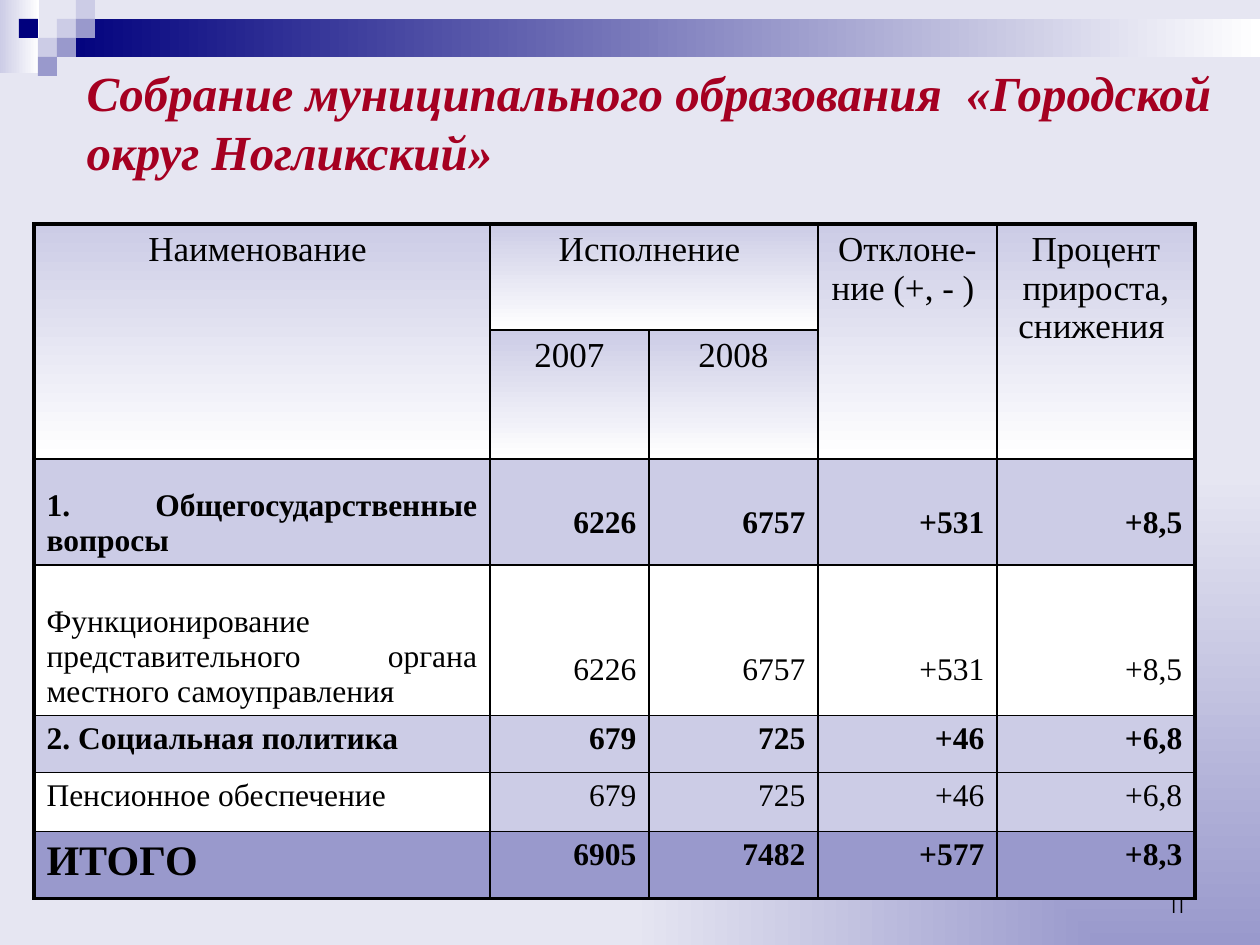
from lxml import etree
from pptx import Presentation
from pptx.dml.color import RGBColor
from pptx.enum.shapes import MSO_SHAPE
from pptx.enum.text import MSO_ANCHOR, MSO_AUTO_SIZE, PP_ALIGN
from pptx.oxml.ns import qn
from pptx.util import Emu, Pt

RECTANGLE = MSO_SHAPE.RECTANGLE
TOP, MIDDLE, BOTTOM = MSO_ANCHOR.TOP, MSO_ANCHOR.MIDDLE, MSO_ANCHOR.BOTTOM
LEFT, CENTER, RIGHT, JUSTIFY = (
    PP_ALIGN.LEFT, PP_ALIGN.CENTER, PP_ALIGN.RIGHT, PP_ALIGN.JUSTIFY)

BLACK = RGBColor(0x00, 0x00, 0x00)
WHITE = RGBColor(0xFF, 0xFF, 0xFF)
NAVY = RGBColor(0x00, 0x00, 0x7D)
LAVENDER = RGBColor(0xCC, 0xCC, 0xE6)
VIOLET = RGBColor(0x99, 0x99, 0xCC)
PALE = RGBColor(0xE6, 0xE6, 0xF2)
CRIMSON = RGBColor(0xA5, 0x00, 0x21)

SERIF, SANS = "Times New Roman", "Montserrat"
TITLE = "Собрание муниципального образования  «Городской округ Ногликский»"

SQUARE = 19
# Column, row and colour of each small square
SQUARES = [(3, 1, LAVENDER), (4, 0, LAVENDER), (4, 1, VIOLET), (2, 2, LAVENDER),
           (1, 1, NAVY), (3, 2, VIOLET), (2, 3, VIOLET)]

COLUMN_WIDTHS = [456, 159, 169, 179, 198]
ROW_HEIGHTS = [106, 58, 106, 151, 57, 59, 67]
CELL_MARGIN, LINE_DROP = 6, 41
# Row, column, last row and last column of each heading
HEADINGS = [
    ("Наименование ", 0, 0, 1, 0),
    ("Исполнение ", 0, 1, 0, 2),
    ("Отклоне-ние (+, - ) ", 0, 3, 1, 3),
    ("Процент прироста, снижения ", 0, 4, 1, 4),
    ("2007", 1, 1, 1, 1),
    ("2008", 1, 2, 1, 2),
]
# Name, values, bold, name size, name fill, value fill, lines the values drop
BUDGET = [
    ("1. Общегосударственные вопросы", ["6226", "6757", "+531", "+8,5"],
     True, 18, LAVENDER, LAVENDER, 1),
    ("Функционирование представительного органа местного самоуправления ",
     ["6226", "6757", "+531", "+8,5"], False, 18, WHITE, WHITE, 2),
    ("2. Социальная политика", ["679", "725", "+46", "+6,8"],
     True, 18, LAVENDER, LAVENDER, 0),
    ("Пенсионное обеспечение", ["679", "725", "+46", "+6,8"],
     False, 18, WHITE, LAVENDER, 0),
    ("ИТОГО", ["6905", "7482", "+577", "+8,3"], True, 24, VIOLET, VIOLET, 0),
]


def px(length):
    return Emu(round(length * 914400 / 126))


def fill_gradient(fill, start, end, angle=0):
    fill.gradient()
    fill.gradient_angle = angle
    for stop, color in zip(fill.gradient_stops, (start, end)):
        stop.color.rgb = color


def set_background(page):
    """Gradient that spreads from the lower right corner."""
    fill_gradient(page.background.fill, VIOLET, PALE)
    linear = page.element.find(".//" + qn("a:lin"))
    spread = etree.Element(qn("a:path"), {"path": "rect"})
    etree.SubElement(spread, qn("a:fillToRect"), {"l": "100000", "t": "100000"})
    linear.getparent().replace(linear, spread)


def add_block(page, left, top, width, height, color, fade_to=None):
    block = page.shapes.add_shape(
        RECTANGLE, px(left), px(top), px(width), px(height))
    block.shadow.inherit = False
    block.line.fill.background()
    if fade_to is None:
        block.fill.solid()
        block.fill.fore_color.rgb = color
    else:
        fill_gradient(block.fill, color, fade_to)


def write(text_frame, text, size, align, font=SERIF, color=BLACK,
          bold=False, italic=False):
    text_frame.text = text
    text_frame.word_wrap = True
    para = text_frame.paragraphs[0]
    para.alignment = align
    span = para.runs[0].font
    span.name, span.size, span.color.rgb = font, Pt(size), color
    span.bold, span.italic = bold, italic
    return para


def add_title(page):
    title = page.shapes.title
    title.left, title.top, title.width, title.height = map(px, (74, 86, 1152, 71))
    write(title.text_frame, TITLE, 28, LEFT, color=CRIMSON, bold=True, italic=True)
    title.text_frame.auto_size = MSO_AUTO_SIZE.NONE
    title.text_frame.vertical_anchor = MIDDLE


def set_borders(cell, widths):
    properties = cell._tc.get_or_add_tcPr()
    for position, (side, width) in enumerate(widths.items()):
        line = etree.Element(qn("a:" + side), {"w": str(Pt(width))})
        fill = etree.SubElement(line, qn("a:solidFill"))
        etree.SubElement(fill, qn("a:srgbClr"), {"val": str(BLACK)})
        properties.insert(position, line)


def fill_cell(cell, text, size, align, color, bold=False, anchor=TOP, drop=0):
    para = write(cell.text_frame, text, size, align, bold=bold)
    if align != JUSTIFY:
        para.space_before = Pt(size * 0.2)
    cell.vertical_anchor = anchor
    cell.margin_top = px(CELL_MARGIN + drop * LINE_DROP)
    if color is None:
        fill_gradient(cell.fill, LAVENDER, WHITE, 270)
    else:
        cell.fill.solid()
        cell.fill.fore_color.rgb = color


def add_budget_table(page):
    last_row, last_column = len(ROW_HEIGHTS) - 1, len(COLUMN_WIDTHS) - 1
    table = page.shapes.add_table(
        last_row + 1, last_column + 1, px(34), px(224),
        px(sum(COLUMN_WIDTHS)), px(sum(ROW_HEIGHTS))).table
    for column, width in zip(table.columns, COLUMN_WIDTHS):
        column.width = px(width)
    for row, height in zip(table.rows, ROW_HEIGHTS):
        row.height = px(height)

    # Headings
    for text, row, column, end_row, end_column in HEADINGS:
        cell = table.cell(row, column)
        if (row, column) != (end_row, end_column):
            cell.merge(table.cell(end_row, end_column))
        fill_cell(cell, text, 20, CENTER, None)

    # Budget lines
    for row, line in enumerate(BUDGET, 2):
        name, values, bold, size, name_color, value_color, drop = line
        fill_cell(table.cell(row, 0), name, size, JUSTIFY, name_color, bold,
                  BOTTOM if drop else TOP)
        for column, value in enumerate(values, 1):
            fill_cell(table.cell(row, column), value, 18, RIGHT, value_color,
                      bold, drop=drop)

    # Thick frame, thin inner lines
    for row in range(last_row + 1):
        for column in range(last_column + 1):
            outer = {"lnL": column == 0, "lnR": column == last_column,
                     "lnT": row == 0, "lnB": row == last_row}
            set_borders(table.cell(row, column),
                        {side: 2.25 if edge else 1 for side, edge in outer.items()})


def add_page_number(page):
    box = page.shapes.add_textbox(px(903), px(861), px(294), px(63))
    write(box.text_frame, "11", 12, RIGHT, font=SANS)
    box.text_frame.vertical_anchor = BOTTOM


def main():
    deck = Presentation()
    deck.slide_width, deck.slide_height = px(1260), px(945)
    page = deck.slides.add_slide(deck.slide_layouts[5])
    set_background(page)

    # Header decoration
    add_block(page, 0, 0, 39, 73, LAVENDER, WHITE)
    add_block(page, 57, 19, 1203, 38, NAVY, WHITE)
    for column, row, color in SQUARES:
        add_block(page, column * SQUARE, row * SQUARE, SQUARE, SQUARE, color)

    add_title(page)
    add_budget_table(page)
    add_page_number(page)
    deck.save("out.pptx")


if __name__ == "__main__":
    main()
